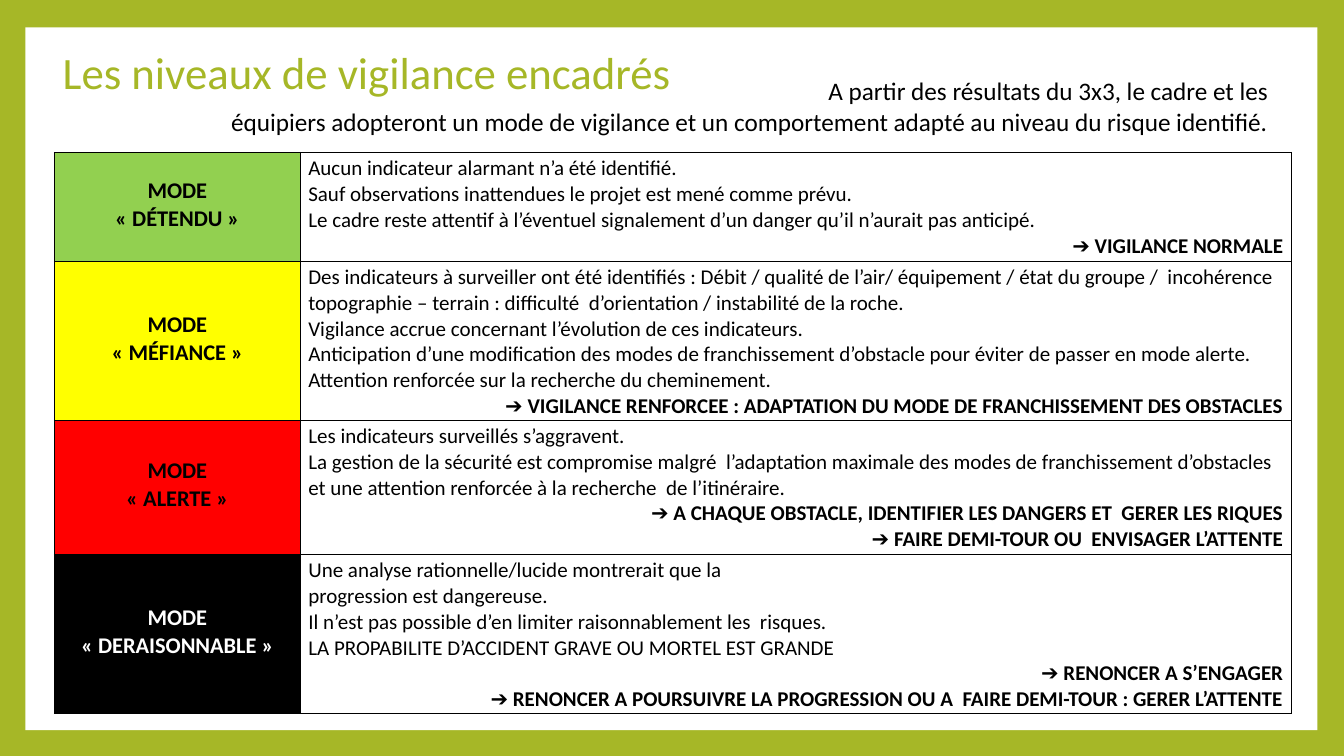
from copy import deepcopy
from dataclasses import dataclass

from lxml.etree import SubElement
from pptx import Presentation
from pptx.dml.color import RGBColor
from pptx.enum.shapes import MSO_SHAPE
from pptx.enum.text import MSO_ANCHOR, PP_ALIGN
from pptx.oxml.ns import qn
from pptx.util import Cm, Pt


@dataclass(frozen=True)
class Theme:
    font: str = "Calibri"
    accent: str = "A6B727"
    black: str = "000000"
    white: str = "FFFFFF"
    green: str = "92D050"
    yellow: str = "FFFF00"
    red: str = "FF0000"
    title: int = 32
    intro: int = 18
    mode: int = 16
    body: int = 15


T = Theme()

INTRO = ("A partir des résultats du 3x3, le cadre et les équipiers adopteront un mode de "
         "vigilance et un comportement adapté au niveau du risque identifié.")

# mode, fill, text colour, row height in cm, indicators, instructions
LEVELS = [
    ("DÉTENDU", T.green, T.black, 2.74,
     "Aucun indicateur alarmant n’a été identifié.\n"
     "Sauf observations inattendues le projet est mené comme prévu.\n"
     "Le cadre reste attentif à l’éventuel signalement d’un danger qu’il n’aurait pas anticipé.",
     ["➔ VIGILANCE NORMALE"]),
    ("MÉFIANCE", T.yellow, T.black, 4.01,
     "Des indicateurs à surveiller ont été identifiés : Débit / qualité de l’air/ équipement / "
     "état du groupe /  incohérence topographie – terrain : difficulté  d’orientation / "
     "instabilité de la roche.\n"
     "Vigilance accrue concernant l’évolution de ces indicateurs.\n"
     "Anticipation d’une modification des modes de franchissement d’obstacle pour éviter de "
     "passer en mode alerte.\n"
     "Attention renforcée sur la recherche du cheminement.",
     ["➔ VIGILANCE RENFORCEE : ADAPTATION DU MODE DE FRANCHISSEMENT DES OBSTACLES"]),
    ("ALERTE", T.red, T.black, 3.38,
     "Les indicateurs surveillés s’aggravent.\n"
     "La gestion de la sécurité est compromise malgré  l’adaptation maximale des modes de "
     "franchissement d’obstacles et une attention renforcée à la recherche  de l’itinéraire.",
     ["➔ A CHAQUE OBSTACLE, IDENTIFIER LES DANGERS ET  GERER LES RIQUES",
      "➔ FAIRE DEMI-TOUR OU  ENVISAGER L’ATTENTE"]),
    ("DERAISONNABLE", T.black, T.white, 4.01,
     "Une analyse rationnelle/lucide montrerait que la\n"
     "progression est dangereuse.\n"
     "Il n’est pas possible d’en limiter raisonnablement les  risques.\n"
     "LA PROPABILITE D’ACCIDENT GRAVE OU MORTEL EST GRANDE",
     ["➔ RENONCER A S’ENGAGER\n"
      "➔ RENONCER A POURSUIVRE LA PROGRESSION OU A  FAIRE DEMI-TOUR : GERER L’ATTENTE"]),
]


def write(p, text, size, color=T.black, bold=False, align=PP_ALIGN.LEFT):
    """Fill a paragraph and give its runs and line breaks the same format."""
    p.text = text
    p.alignment = align
    for r in p.runs:
        r.font.name = T.font
        r.font.size = Pt(size)
        r.font.bold = bold
        r.font.color.rgb = RGBColor.from_string(color)
    for br in p._p.findall(qn("a:br")):
        br.insert(0, deepcopy(p.runs[0].font._element))


def add_frame(s):
    """Lay a white panel over the coloured background."""
    fill = s.background.fill
    fill.solid()
    fill.fore_color.rgb = RGBColor.from_string(T.accent)
    sp = s.shapes.add_shape(MSO_SHAPE.RECTANGLE, Cm(0.64), Cm(0.69), Cm(32.56), Cm(17.71))
    sp.shadow.inherit = False
    sp.fill.solid()
    sp.fill.fore_color.rgb = RGBColor.from_string(T.white)
    sp.line.fill.background()
    s.shapes._spTree.insert(2, sp._element)


def set_title(s, text):
    sp = s.shapes.title
    sp.left, sp.top, sp.width, sp.height = Cm(-4.01), Cm(0.86), Cm(26.52), Cm(2.06)
    tf = sp.text_frame
    tf.vertical_anchor = MSO_ANCHOR.MIDDLE
    p = tf.paragraphs[0]
    write(p, text, T.title, T.accent, align=PP_ALIGN.CENTER)
    p.line_spacing = 0.9


def add_intro(s):
    tf = s.shapes.add_textbox(Cm(4.24), Cm(1.78), Cm(27.97), Cm(1.8)).text_frame
    tf.word_wrap = True
    p = tf.paragraphs[0]
    write(p, INTRO, T.intro, align=PP_ALIGN.RIGHT)
    p._p.get_or_add_pPr().set("indent", str(Cm(15.95)))


def format_cell(cell, anchor, fill=None):
    cell.vertical_anchor = anchor
    cell.margin_left = cell.margin_right = Cm(0.2)
    cell.margin_top = cell.margin_bottom = Cm(0.09)
    tcPr = cell._tc.get_or_add_tcPr()
    for side in ("a:lnL", "a:lnR", "a:lnT", "a:lnB"):
        ln = SubElement(tcPr, qn(side), w=str(Pt(1)))
        SubElement(SubElement(ln, qn("a:solidFill")), qn("a:srgbClr"), val=T.black)
    if fill:
        cell.fill.solid()
        cell.fill.fore_color.rgb = RGBColor.from_string(fill)
    else:
        cell.fill.background()


def fill_mode(cell, mode, fill, color):
    format_cell(cell, MSO_ANCHOR.MIDDLE, fill)
    tf = cell.text_frame
    p = tf.paragraphs[0]
    write(p, "MODE", T.mode, color, True, PP_ALIGN.CENTER)
    p.line_spacing = Pt(16.4)
    p = tf.add_paragraph()
    write(p, f"« {mode} »", T.mode, color, True, PP_ALIGN.CENTER)
    p.space_before = Pt(0.3)


def fill_advice(cell, indicators, instructions):
    format_cell(cell, MSO_ANCHOR.BOTTOM)
    tf = cell.text_frame
    write(tf.paragraphs[0], indicators, T.body)
    for text in instructions:
        write(tf.add_paragraph(), text, T.body, bold=True, align=PP_ALIGN.RIGHT)


def add_levels(s):
    height = sum(level[3] for level in LEVELS)
    table = s.shapes.add_table(len(LEVELS), 2, Cm(1.37), Cm(3.84), Cm(31.17), Cm(height)).table
    table.first_row = table.horz_banding = False
    table.columns[0].width, table.columns[1].width = Cm(6.2), Cm(24.97)
    for row, (mode, fill, color, row_height, indicators, instructions) in zip(table.rows, LEVELS):
        row.height = Cm(row_height)
        fill_mode(row.cells[0], mode, fill, color)
        fill_advice(row.cells[1], indicators, instructions)


def main():
    prs = Presentation()
    prs.slide_width, prs.slide_height = Cm(33.87), Cm(19.05)
    s = prs.slides.add_slide(prs.slide_layouts[5])
    add_frame(s)
    set_title(s, "Les niveaux de vigilance encadrés")
    add_intro(s)
    add_levels(s)
    prs.save("out.pptx")


if __name__ == "__main__":
    main()
